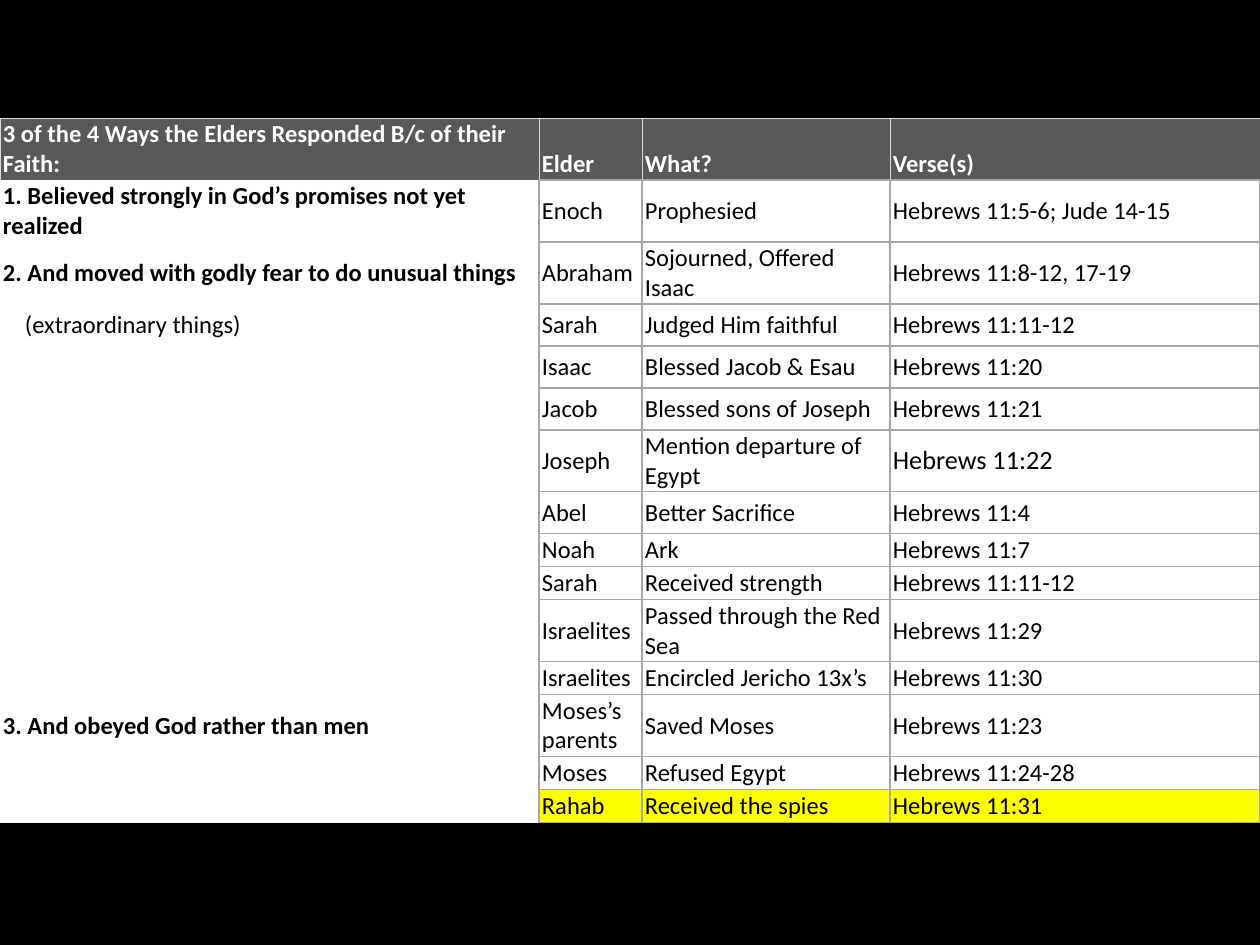
from lxml import etree
from pptx import Presentation
from pptx.dml.color import RGBColor
from pptx.enum.text import MSO_ANCHOR
from pptx.oxml.ns import qn
from pptx.util import Pt

PX = 914400 // 126
BOTTOM, MIDDLE = MSO_ANCHOR.BOTTOM, MSO_ANCHOR.MIDDLE
BLACK, WHITE, DARK, YELLOW = "000000", "FFFFFF", "595959", "FFFF00"
GRID, HEADER_LINE = ("A6A6A6", 1), ("D9D9E3", 0.5)

TALL, MEDIUM, SHORT = 62, 42, 33
TABLE_TOP = 118
COLUMN_WIDTHS = [539, 103, 248, 370]
INSET_X, INSET_Y, INDENT = 3, 1, 25
FONT_SIZE, LARGER_SIZE = 14, 15

HEADER = ("3 of the 4 Ways the Elders Responded B/c of their Faith:",
          "Elder", "What?", "Verse(s)")
NOTE = "(extraordinary things)"
LARGER_VERSE = "Hebrews 11:22"
HIGHLIGHTED_ELDER = "Rahab"
ROWS = [
    (TALL, HEADER),
    (TALL, ("1. Believed strongly in God’s promises not yet realized",
            "Enoch", "Prophesied", "Hebrews 11:5-6; Jude 14-15")),
    (TALL, ("2. And moved with godly fear to do unusual things",
            "Abraham", "Sojourned, Offered Isaac", "Hebrews 11:8-12, 17-19")),
    (MEDIUM, (NOTE, "Sarah", "Judged Him faithful", "Hebrews 11:11-12")),
    (MEDIUM, ("", "Isaac", "Blessed Jacob & Esau", "Hebrews 11:20")),
    (MEDIUM, ("", "Jacob", "Blessed sons of Joseph", "Hebrews 11:21")),
    (TALL, ("", "Joseph", "Mention departure of Egypt", LARGER_VERSE)),
    (MEDIUM, ("", "Abel", "Better Sacrifice", "Hebrews 11:4")),
    (SHORT, ("", "Noah", "Ark", "Hebrews 11:7")),
    (SHORT, ("", "Sarah", "Received strength", "Hebrews 11:11-12")),
    (TALL, ("", "Israelites", "Passed through the Red Sea", "Hebrews 11:29")),
    (SHORT, ("", "Israelites", "Encircled Jericho 13x’s", "Hebrews 11:30")),
    (TALL, ("3. And obeyed God rather than men",
            "Moses’s parents", "Saved Moses", "Hebrews 11:23")),
    (SHORT, ("", "Moses", "Refused Egypt", "Hebrews 11:24-28")),
    (SHORT, ("", HIGHLIGHTED_ELDER, "Received the spies", "Hebrews 11:31")),
]


def color(hex_string):
    return RGBColor.from_string(hex_string)


def cell_borders(is_header, is_way):
    """Return the line of each side, None where the side has no line."""
    if is_header:
        sides = dict.fromkeys("LRT", HEADER_LINE)
        return {**sides, "B": None if is_way else GRID}
    if is_way:
        return {"L": None, "R": GRID, "T": None, "B": None}
    return dict.fromkeys("LRTB", GRID)


def draw_borders(cell, borders):
    properties = cell._tc.get_or_add_tcPr()
    for side, border in borders.items():
        line = etree.SubElement(properties, qn(f"a:ln{side}"))
        if border is None:
            etree.SubElement(line, qn("a:noFill"))
            continue
        hex_string, points = border
        line.set("w", str(int(Pt(points))))
        fill = etree.SubElement(line, qn("a:solidFill"))
        etree.SubElement(fill, qn("a:srgbClr"), val=hex_string)


def write_text(cell, text, font_format):
    paragraph = cell.text_frame.paragraphs[0]
    if not text:
        end = paragraph._p.get_or_add_endParaRPr()
        end.set("sz", str(FONT_SIZE * 100))
        return
    run = paragraph.add_run()
    run.text = text
    run.font.color.rgb = color(WHITE if text in HEADER else BLACK)
    for name, value in font_format.items():
        setattr(run.font, name, value)


def fill_cell(cell, text, is_header, is_way, is_highlighted):
    cell_format = {
        "margin_left": (INDENT if text == NOTE else INSET_X) * PX,
        "margin_right": INSET_X * PX,
        "margin_top": INSET_Y * PX,
        "margin_bottom": INSET_Y * PX,
        "vertical_anchor": BOTTOM if is_header else MIDDLE,
    }
    for name, value in cell_format.items():
        setattr(cell, name, value)
    draw_borders(cell, cell_borders(is_header, is_way))
    cell.fill.solid()
    background = DARK if is_header else YELLOW if is_highlighted else WHITE
    cell.fill.fore_color.rgb = color(background)
    write_text(cell, text, {
        "name": "Calibri",
        "size": Pt(LARGER_SIZE if text == LARGER_VERSE else FONT_SIZE),
        "bold": is_header or (is_way and text != NOTE),
    })


def main():
    presentation = Presentation()
    presentation.slide_width = 1260 * PX
    presentation.slide_height = 945 * PX
    slide = presentation.slides.add_slide(presentation.slide_layouts[6])
    slide.background.fill.solid()
    slide.background.fill.fore_color.rgb = color(BLACK)

    table = slide.shapes.add_table(
        len(ROWS), len(COLUMN_WIDTHS), 0, TABLE_TOP * PX,
        sum(COLUMN_WIDTHS) * PX, sum(height for height, _ in ROWS) * PX).table
    table.first_row = table.horz_banding = False
    for column, width in zip(table.columns, COLUMN_WIDTHS):
        column.width = width * PX
    for row, (height, texts) in zip(table.rows, ROWS):
        row.height = height * PX
        for index, (cell, text) in enumerate(zip(row.cells, texts)):
            is_way = index == 0
            is_highlighted = HIGHLIGHTED_ELDER in texts and not is_way
            fill_cell(cell, text, texts is HEADER, is_way, is_highlighted)

    presentation.save("out.pptx")


if __name__ == "__main__":
    main()
